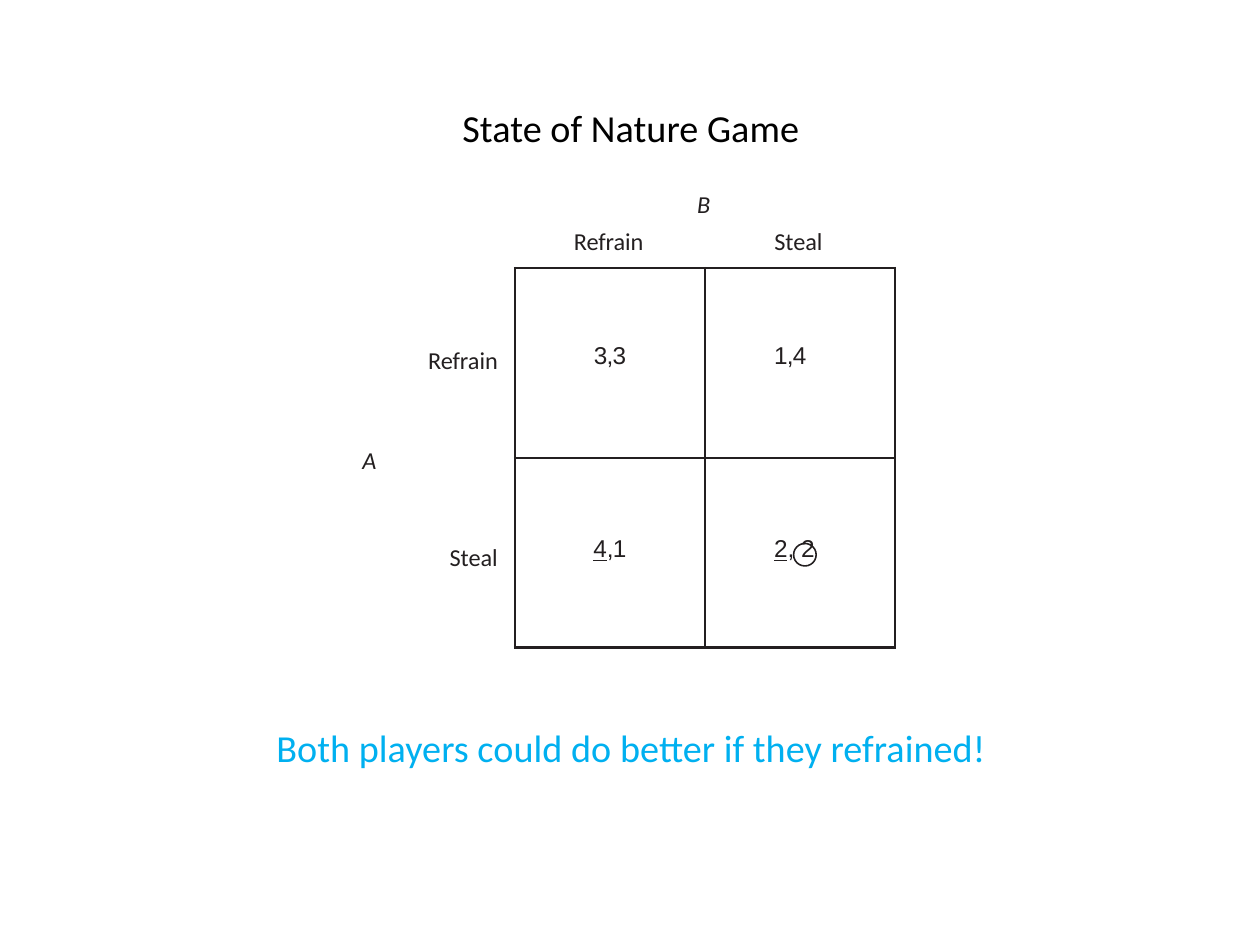
from dataclasses import dataclass

import pptx
import pptx.dml.color
import pptx.enum.shapes
import pptx.enum.text
import pptx.oxml
import pptx.oxml.ns
import pptx.util

Pt = pptx.util.Pt
Align = pptx.enum.text.PP_ALIGN


@dataclass(frozen=True)
class Theme:
    text_font: str = "Calibri"
    payoff_font: str = "Arial"
    title: str = "000000"
    ink: str = "231F20"
    remark: str = "00B0F0"
    large: float = 11
    small: float = 7
    border: float = 0.75
    ring: float = 0.45


THEME = Theme()


def add_span(para, text, font, size, color, italic=False, underline=False, spacing=0):
    span = para.add_run()
    span.text = text
    span.font.name = font
    span.font.size = Pt(size)
    span.font.color.rgb = pptx.dml.color.RGBColor.from_string(color)
    span.font.italic = italic
    span.font.underline = underline
    if spacing:
        span._r.get_or_add_rPr().set("spc", str(round(spacing * 100)))


def fill_line(shape, text, size, color, align=Align.CENTER, italic=False):
    """Put one line of text at the top of a shape, without insets."""
    frame = shape.text_frame
    frame.margin_left = frame.margin_right = frame.margin_top = frame.margin_bottom = 0
    frame.word_wrap = True
    frame.auto_size = pptx.enum.text.MSO_AUTO_SIZE.NONE
    frame.vertical_anchor = pptx.enum.text.MSO_ANCHOR.TOP
    para = frame.paragraphs[0]
    para.alignment = align
    add_span(para, text, THEME.text_font, size, color, italic)


def add_title(page, left, top, width, height, text):
    title = page.shapes.title
    title.left, title.top, title.width, title.height = map(Pt, (left, top, width, height))
    fill_line(title, text, THEME.large, THEME.title)


def add_remark(page, left, top, width, height, text):
    box = page.shapes.add_textbox(Pt(left), Pt(top), Pt(width), Pt(height))
    fill_line(box, text, THEME.large, THEME.remark)


def add_label(page, left, top, width, text, align=Align.CENTER, italic=False):
    box = page.shapes.add_textbox(Pt(left), Pt(top), Pt(width), Pt(8.6))
    fill_line(box, text, THEME.small, THEME.ink, align, italic)


def set_borders(cell):
    properties = cell._tc.get_or_add_tcPr()
    for position, side in enumerate(("lnL", "lnR", "lnT", "lnB")):
        properties.insert(position, pptx.oxml.parse_xml(
            f'<a:{side} {pptx.oxml.ns.nsdecls("a")} w="{Pt(THEME.border)}">'
            f'<a:solidFill><a:srgbClr val="{THEME.ink}"/></a:solidFill></a:{side}>'))


def add_payoffs(page, left, top, size, payoffs):
    """Draw the payoff table; each cell is (alignment, [(text, underline, spacing)])."""
    count = len(payoffs)
    frame = page.shapes.add_table(count, count, Pt(left), Pt(top), Pt(size), Pt(size))
    table = frame.table
    table.first_row = table.horz_banding = False
    text_tops = (21.4, 22.4)
    for row, cells in enumerate(payoffs):
        table.rows[row].height = Pt(size / count)
        table.columns[row].width = Pt(size / count)
        for column, (align, spans) in enumerate(cells):
            cell = table.cell(row, column)
            cell.fill.background()
            set_borders(cell)
            cell.margin_left = Pt(20 if align == Align.LEFT else 0)
            cell.margin_right = cell.margin_bottom = 0
            cell.margin_top = Pt(text_tops[row])
            para = cell.text_frame.paragraphs[0]
            para.alignment = align
            for text, underline, spacing in spans:
                add_span(para, text, THEME.payoff_font, THEME.small, THEME.ink,
                         underline=underline, spacing=spacing)


def add_ring(page, center_x, center_y, size):
    ring = page.shapes.add_shape(
        pptx.enum.shapes.MSO_SHAPE.OVAL,
        Pt(center_x - size / 2), Pt(center_y - size / 2), Pt(size), Pt(size))
    ring.shadow.inherit = False
    ring.fill.background()
    ring.line.color.rgb = pptx.dml.color.RGBColor.from_string(THEME.ink)
    ring.line.width = Pt(THEME.ring)


def add_game(page, left, top, size, players, choices, payoffs):
    cell = size / len(choices)
    row_player, column_player = players

    # Column player and choices, centred above the table
    add_label(page, left - 0.4, top - 22.8, size, column_player, italic=True)
    for column, choice in enumerate(choices):
        add_label(page, left - 0.4 + column * cell, top - 12.1, cell, choice)

    # Row player and choices, beside the table
    add_label(page, left - 47, top + size / 2 - 3.8, 10, row_player, italic=True)
    for row, choice in enumerate(choices):
        add_label(page, left - 45, top + 22.1 + row * (cell + 2.1), 40, choice, Align.RIGHT)

    # Payoffs, with one ringed
    add_payoffs(page, left, top, size, payoffs)
    add_ring(page, left + 83.5, top + 82.6, 6.5)


def main():
    deck = pptx.Presentation()
    deck.slide_width, deck.slide_height = Pt(363), Pt(272.5)
    page = deck.slides.add_slide(deck.slide_layouts[5])

    add_title(page, 130.3, 30, 103, 14, "State of Nature Game")
    payoffs = [
        [(Align.CENTER, [("3,3", False, -0.2)]),
         (Align.LEFT, [("1,4", False, -0.2)])],
        [(Align.CENTER, [("4", True, -0.2), (",1", False, -0.2)]),
         (Align.LEFT, [("2", True, 0), (", ", False, 0), ("2", False, -0.5)])],
    ]
    add_game(page, 148.4, 77.2, 109.4, ("A", "B"), ("Refrain", "Steal"), payoffs)
    add_remark(page, 75.9, 208.7, 212, 14, "Both players could do better if they refrained!")

    deck.save("out.pptx")


if __name__ == "__main__":
    main()
